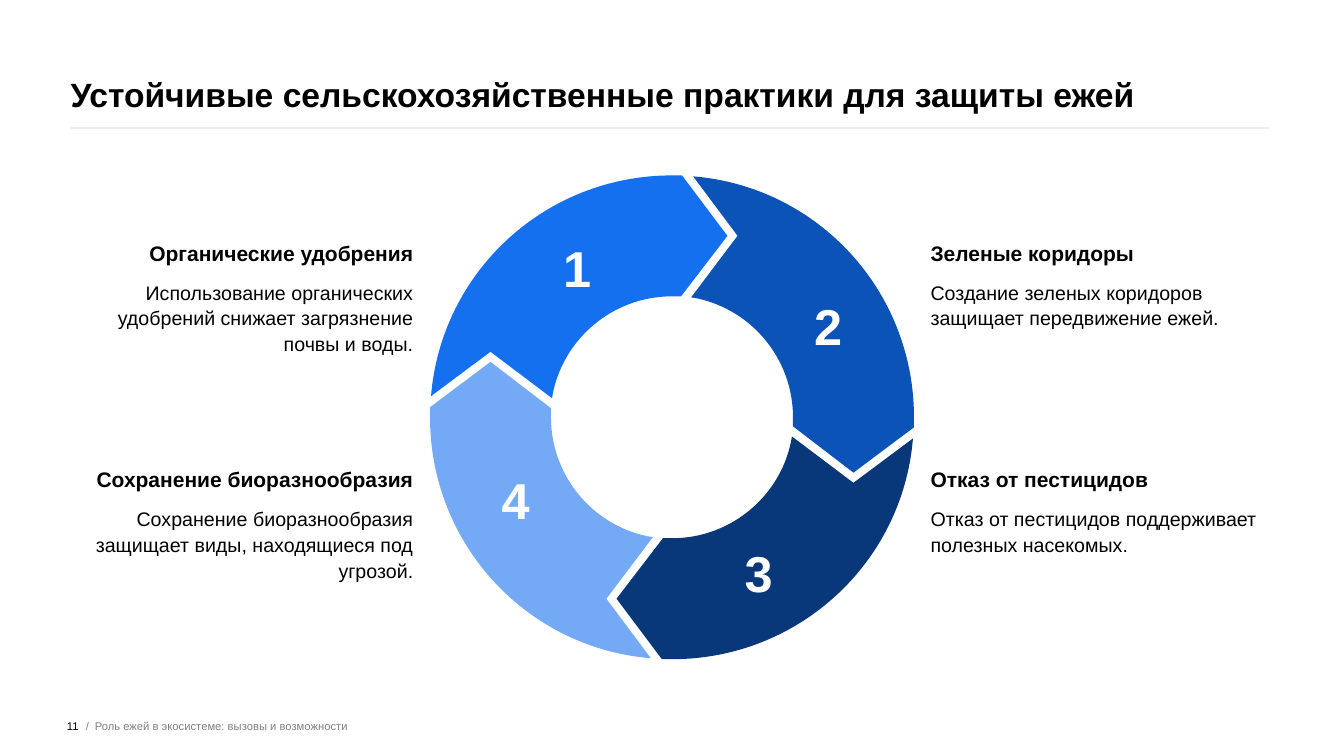
from lxml import etree
from pptx import Presentation
from pptx.dml.color import RGBColor
from pptx.enum.shapes import MSO_CONNECTOR
from pptx.enum.text import MSO_ANCHOR, MSO_AUTO_SIZE, PP_ALIGN
from pptx.oxml.ns import qn
from pptx.util import Inches, Pt

LEFT, CENTER, RIGHT = PP_ALIGN.LEFT, PP_ALIGN.CENTER, PP_ALIGN.RIGHT
TOP, MIDDLE, BOTTOM = MSO_ANCHOR.TOP, MSO_ANCHOR.MIDDLE, MSO_ANCHOR.BOTTOM
NO_AUTOFIT = MSO_AUTO_SIZE.NONE
STRAIGHT = MSO_CONNECTOR.STRAIGHT

COLORS = {"text": "000000", "muted": "808080", "rule": "EAECF0", "number": "FFFFFF"}
TITLE = {"size": Pt(24), "bold": True}
HEADING = {"size": Pt(15), "bold": True}
BODY = {"size": Pt(14), "bold": False}
NUMBER = {"size": Pt(36), "bold": True}
FOOTER = {"size": Pt(8), "bold": False}

WIDTH, HEIGHT = 13.33, 7.5
MARGIN = 0.7
COLUMNS = [(MARGIN, RIGHT), (9.23, LEFT)]
FIRST_ROW, ROW_STEP = 2.41, 2.25
COLUMN_WIDTH = 3.4
RING_SIZE = 4.8
RING_BOX = ((WIDTH - RING_SIZE) / 2, 1.74, RING_SIZE, RING_SIZE)

# heading, description, column, row
PRACTICES = [
    ("Органические удобрения",
     "Использование органических удобрений снижает загрязнение почвы и воды.", 0, 0),
    ("Зеленые коридоры", "Создание зеленых коридоров защищает передвижение ежей.", 1, 0),
    ("Отказ от пестицидов", "Отказ от пестицидов поддерживает полезных насекомых.", 1, 1),
    ("Сохранение биоразнообразия",
     "Сохранение биоразнообразия защищает виды, находящиеся под угрозой.", 0, 1),
]
# fill, offset of the number from the ring's centre
SEGMENTS = [
    ("1570EF", (-0.94, -1.49)),
    ("0C53B7", (1.55, -0.91)),
    ("08387A", (0.86, 1.54)),
    ("73A9F5", (-1.55, 0.81)),
]
# First segment around the ring's centre: one point is a line, three are a curve
SEGMENT_START = (0.1, -2.4)
SEGMENT_STEPS = [
    [(0.06, -2.4), (0.03, -2.4), (0, -2.4)],
    [(-1.26, -2.4), (-2.29, -1.44), (-2.39, -0.21)],
    [(-1.8, -0.65)],
    [(-1.19, -0.19)],
    [(-1.1, -0.76), (-0.6, -1.2), (0, -1.2)],
    [(0.03, -1.2), (0.06, -1.2), (0.09, -1.2)],
    [(0.55, -1.8)],
]


def write(box, text, font, color="text", anchor=TOP, **paragraph):
    """Fill a text shape with one formatted paragraph and no insets."""
    frame = box.text_frame
    settings = {"word_wrap": True, "auto_size": NO_AUTOFIT, "vertical_anchor": anchor}
    settings.update(dict.fromkeys(
        ("margin_left", "margin_top", "margin_right", "margin_bottom"), 0))
    for name, value in settings.items():
        setattr(frame, name, value)
    para = frame.paragraphs[0]
    for name, value in paragraph.items():
        setattr(para, name, value)
    span = para.add_run()
    span.text = text
    for name, value in {"name": "Arial", **font}.items():
        setattr(span.font, name, value)
    span.font.color.rgb = RGBColor.from_string(COLORS[color])


def add_text(page, box, text, font, **options):
    write(page.shapes.add_textbox(*map(Inches, box)), text, font, **options)


def add_header(page, box, text):
    left, top, width, height = box
    title = page.shapes.title
    places = {"left": left, "top": top, "width": width, "height": height}
    for name, value in places.items():
        setattr(title, name, Inches(value))
    write(title, text, TITLE, anchor=BOTTOM, alignment=LEFT, space_before=Pt(10))
    rule_y = Inches(top + height + 0.14)
    rule = page.shapes.add_connector(
        STRAIGHT, Inches(left), rule_y, Inches(WIDTH - left - 0.04), rule_y)
    rule.line.color.rgb = RGBColor.from_string(COLORS["rule"])
    rule.line.width = Pt(2)
    etree.SubElement(rule._element.spPr, qn("a:effectLst"))


def add_practice(page, box, heading, description, alignment):
    left, top, width, height = box
    add_text(page, (left, top, width, 0.23), heading, HEADING,
             alignment=alignment, line_spacing=0.9)
    add_text(page, (left, top + 0.35, width, height - 0.35), description, BODY,
             alignment=alignment, line_spacing=1.1)


def bend(shape, steps):
    """Turn each run of three line points into one Bezier curve."""
    outline = next(shape._element.iter(qn("a:path")))
    nodes = iter(outline.findall(qn("a:lnTo")))
    for step in steps:
        first, *others = [next(nodes) for _ in step]
        if others:
            first.tag = qn("a:cubicBezTo")
        for node in others:
            first.append(node[0])
            outline.remove(node)


def add_segment(page, center, turns, fill):
    """One arrow of the ring, turned clockwise by quarter turns."""
    def place(point):
        x, y = point
        for _ in range(turns):
            x, y = -y, x
        return Inches(center[0] + x), Inches(center[1] + y)

    builder = page.shapes.build_freeform(*place(SEGMENT_START))
    builder.add_line_segments([place(point) for step in SEGMENT_STEPS for point in step])
    segment = builder.convert_to_shape()
    bend(segment, SEGMENT_STEPS)
    segment.shadow.inherit = False
    segment.fill.solid()
    segment.fill.fore_color.rgb = RGBColor.from_string(fill)
    segment.line.fill.background()


def add_ring(page, box):
    left, top, width, height = box
    center = left + width / 2, top + height / 2
    for turns, (fill, _) in enumerate(SEGMENTS):
        add_segment(page, center, turns, fill)
    for number, (_, (shift_x, shift_y)) in enumerate(SEGMENTS, 1):
        number_box = (center[0] + shift_x - 0.32, center[1] + shift_y - 0.3, 0.64, 0.6)
        add_text(page, number_box, str(number), NUMBER, color="number", alignment=CENTER)


def add_footer(page, box, number, text):
    left, top, width, height = box
    add_text(page, (left + 0.35, top, 0.12, height), " /", FOOTER,
             color="muted", anchor=MIDDLE)
    add_text(page, (left + 0.47, top, width - 0.47, height), text, FOOTER,
             color="muted", anchor=MIDDLE, space_before=Pt(10))
    add_text(page, (left, top, 0.31, height), number, FOOTER,
             anchor=MIDDLE, alignment=RIGHT, space_before=Pt(10))


def main():
    deck = Presentation()
    deck.slide_width, deck.slide_height = Inches(WIDTH), Inches(HEIGHT)
    page = deck.slides.add_slide(deck.slide_layouts.get_by_name("Title Only"))
    add_header(page, (MARGIN, 0, 11.93, 1.13),
               "Устойчивые сельскохозяйственные практики для защиты ежей")
    add_footer(page, (0.47, 6.9, 9.08, 0.6), "11",
               "Роль ежей в экосистеме: вызовы и возможности")
    for heading, description, column, row in PRACTICES:
        left, alignment = COLUMNS[column]
        box = (left, FIRST_ROW + row * ROW_STEP, COLUMN_WIDTH, 1.35)
        add_practice(page, box, heading, description, alignment)
    add_ring(page, RING_BOX)
    deck.save("out.pptx")


if __name__ == "__main__":
    main()
